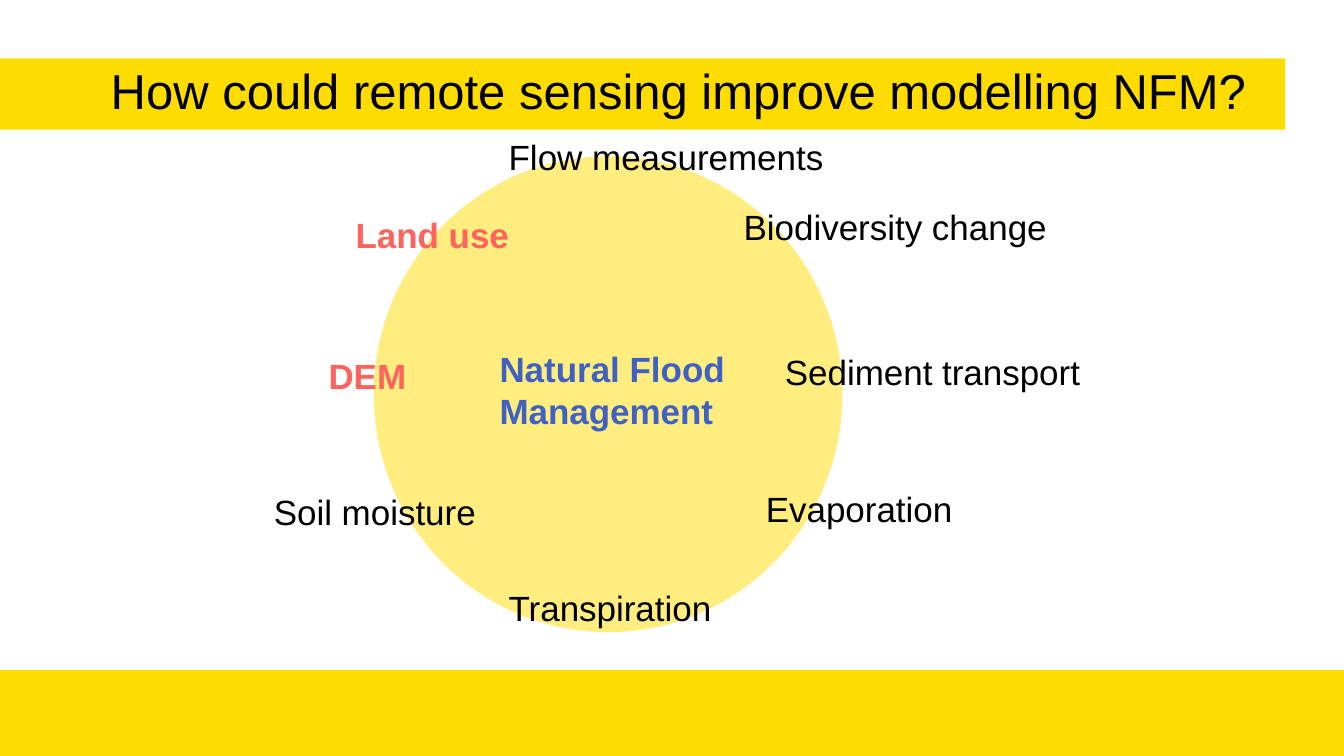
from lxml import etree
from pptx import Presentation
from pptx import util as u
from pptx.dml.color import RGBColor
from pptx.enum import shapes, text
from pptx.oxml.ns import qn

YELLOW, BLACK, BLUE, CORAL = "FFDC00", "000000", "3F61C4", "FF635D"


def colour(value):
    return RGBColor.from_string(value)


class SlideBuilder:
    """Holds the style and the current slide."""

    font = "Arial"
    label_size = 25
    title_size = 35

    def __init__(self, slide):
        self.slide = slide

    def shape(self, kind, left, top, width, height, fill, opacity=100):
        shape = self.slide.shapes.add_shape(
            kind, u.Cm(left), u.Cm(top), u.Cm(width), u.Cm(height))
        shape.shadow.inherit = False
        shape.fill.solid()
        shape.fill.fore_color.rgb = colour(fill)
        shape.line.fill.background()
        if opacity < 100:
            tint = shape.element.spPr.find(qn("a:solidFill"))[0]
            etree.SubElement(tint, qn("a:alpha"), val=str(opacity * 1000))
        return shape

    def set_text(self, frame, words, size, ink, bold=False):
        frame.word_wrap = True
        para = frame.paragraphs[0]
        para.text = words
        para.alignment = text.PP_ALIGN.LEFT
        para.font.name = self.font
        para.font.size = u.Pt(size)
        para.font.bold = bold
        para.font.color.rgb = colour(ink)

    def title(self, bar, words, indent):
        frame = bar.text_frame
        frame.margin_left = u.Cm(indent)
        frame.vertical_anchor = text.MSO_ANCHOR.MIDDLE
        self.set_text(frame, words, self.title_size, BLACK)
        frame.paragraphs[0].line_spacing = 0.9

    def label(self, words, left, top, width, ink=BLACK, height=1.32):
        box = self.slide.shapes.add_textbox(
            u.Cm(left), u.Cm(top), u.Cm(width), u.Cm(height))
        self.set_text(box.text_frame, words, self.label_size, ink, ink != BLACK)
        box.text_frame.auto_size = text.MSO_AUTO_SIZE.SHAPE_TO_FIT_TEXT


def main():
    deck = Presentation()
    deck.slide_width, deck.slide_height = u.Cm(33.87), u.Cm(19.05)
    page = SlideBuilder(deck.slides.add_slide(deck.slide_layouts[6]))
    rectangle = shapes.MSO_SHAPE.RECTANGLE

    # Footer band, circle and title bar
    page.shape(rectangle, 0, 16.89, 33.87, 2.16, YELLOW)
    page.shape(shapes.MSO_SHAPE.OVAL, 9.42, 3.94, 11.81, 11.99, YELLOW, 50)
    title_bar = page.shape(rectangle, 0, 1.47, 32.39, 1.8, YELLOW)
    page.title(title_bar, "How could remote sensing improve modelling NFM?", 2.79)

    # Topic in the centre
    page.label("Natural Flood Management", 12.34, 8.64, 6.5, BLUE, 2.39)

    # Factors around the circle: words, left, top, width, colour
    factors = [
        ("Flow measurements", 12.57, 3.3, 8.76, BLACK),
        ("Biodiversity change", 18.49, 5.05, 11.07, BLACK),
        ("Soil moisture", 6.65, 12.24, 5.64, BLACK),
        ("Sediment transport", 19.53, 8.71, 12.6, BLACK),
        ("Evaporation", 19.05, 12.17, 9.96, BLACK),
        ("DEM", 8.03, 8.81, 7.49, CORAL),
        ("Land use", 8.71, 5.26, 9.37, CORAL),
        ("Transpiration", 12.57, 14.66, 9.96, BLACK),
    ]
    for factor in factors:
        page.label(*factor)

    deck.save("out.pptx")


if __name__ == "__main__":
    main()
